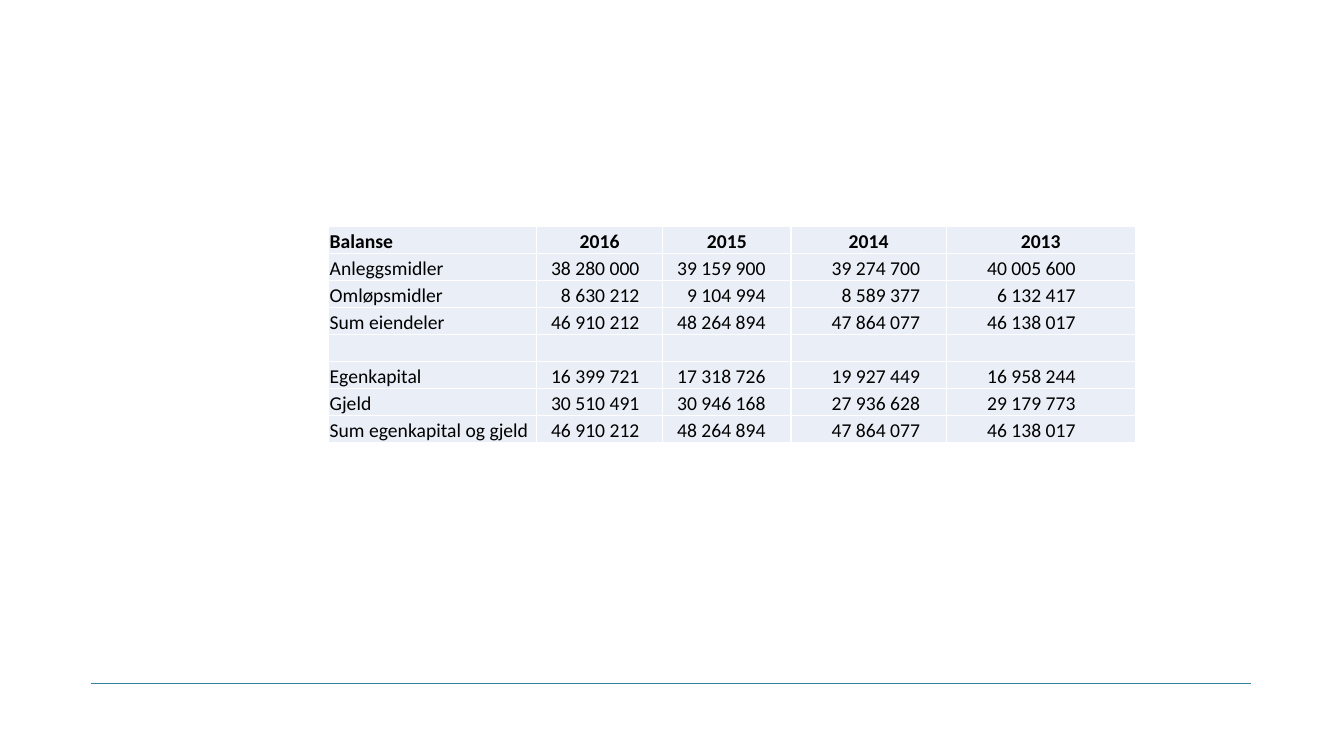
from lxml.etree import SubElement
from pptx import Presentation
from pptx.dml.color import RGBColor
from pptx.enum.shapes import MSO_CONNECTOR
from pptx.enum.text import MSO_ANCHOR, PP_ALIGN
from pptx.oxml.ns import qn
from pptx.util import Inches, Pt

BLACK = RGBColor(0x00, 0x00, 0x00)
WHITE = RGBColor(0xFF, 0xFF, 0xFF)
PALE_BLUE = RGBColor(0xEA, 0xEF, 0xF7)
FOOTER_BLUE = RGBColor(0x36, 0x82, 0xA2)

SLIDE_WIDTH, SLIDE_HEIGHT = 13.33, 7.5
FONT, FONT_SIZE = "Calibri", Pt(14)
COLUMN_WIDTHS = [2.06, 1.25, 1.27, 1.54, 1.87]
RIGHT_INSETS = [0.01, 0.23, 0.25, 0.26, 0.59]

BALANCE = [
    ["Balanse", "2016", "2015", "2014", "2013"],
    ["Anleggsmidler", "38 280 000", "39 159 900", "39 274 700", "40 005 600"],
    ["Omløpsmidler", "8 630 212", "9 104 994", "8 589 377", "6 132 417"],
    ["Sum eiendeler", "46 910 212", "48 264 894", "47 864 077", "46 138 017"],
    [""] * 5,
    ["Egenkapital", "16 399 721", "17 318 726", "19 927 449", "16 958 244"],
    ["Gjeld", "30 510 491", "30 946 168", "27 936 628", "29 179 773"],
    ["Sum egenkapital og gjeld", "46 910 212", "48 264 894", "47 864 077", "46 138 017"],
]


def add_borders(cell):
    properties = cell._tc.get_or_add_tcPr()
    for side in ("a:lnL", "a:lnR", "a:lnT", "a:lnB"):
        border = SubElement(properties, qn(side), w=str(Pt(1)))
        fill = SubElement(border, qn("a:solidFill"))
        SubElement(fill, qn("a:srgbClr"), val=str(WHITE))


def fill_cell(cell, text, is_header, column):
    add_borders(cell)
    cell.fill.solid()
    cell.fill.fore_color.rgb = PALE_BLUE
    cell.vertical_anchor = MSO_ANCHOR.BOTTOM
    cell.margin_left = cell.margin_top = Inches(0.01)
    cell.margin_right = Inches(0.01 if is_header else RIGHT_INSETS[column])
    cell.margin_bottom = 0
    paragraph = cell.text_frame.paragraphs[0]
    if column:
        paragraph.alignment = PP_ALIGN.CENTER if is_header else PP_ALIGN.RIGHT
    if not text:
        SubElement(paragraph._p, qn("a:endParaRPr"), sz=str(int(FONT_SIZE.pt * 100)))
        return
    run = paragraph.add_run()
    run.text = text
    run.font.name = FONT
    run.font.size = FONT_SIZE
    run.font.bold = is_header
    run.font.color.rgb = BLACK


def add_balance_table(slide, left, top, width, height):
    table = slide.shapes.add_table(
        len(BALANCE), len(COLUMN_WIDTHS),
        Inches(left), Inches(top), Inches(width), Inches(height)).table
    table.horz_banding = False
    table.first_row = False
    for column, share in zip(table.columns, COLUMN_WIDTHS):
        column.width = Inches(width * share / sum(COLUMN_WIDTHS))
    for row, values in enumerate(BALANCE):
        table.rows[row].height = Inches(height / len(BALANCE))
        for column, text in enumerate(values):
            fill_cell(table.cell(row, column), text, row == 0, column)


def add_footer_rule(slide, left, top, width):
    rule = slide.shapes.add_connector(
        MSO_CONNECTOR.STRAIGHT,
        Inches(left), Inches(top), Inches(left + width), Inches(top))
    rule.line.color.rgb = FOOTER_BLUE
    rule.line.width = Pt(0.15)
    SubElement(rule._element.spPr, qn("a:effectLst"))


def main():
    presentation = Presentation()
    presentation.slide_width = Inches(SLIDE_WIDTH)
    presentation.slide_height = Inches(SLIDE_HEIGHT)
    slide = presentation.slides.add_slide(presentation.slide_layouts[6])
    add_footer_rule(slide, 0.9, 6.78, 11.51)
    add_balance_table(slide, 3.26, 2.25, 8, 2.14)
    presentation.save("out.pptx")


if __name__ == "__main__":
    main()
